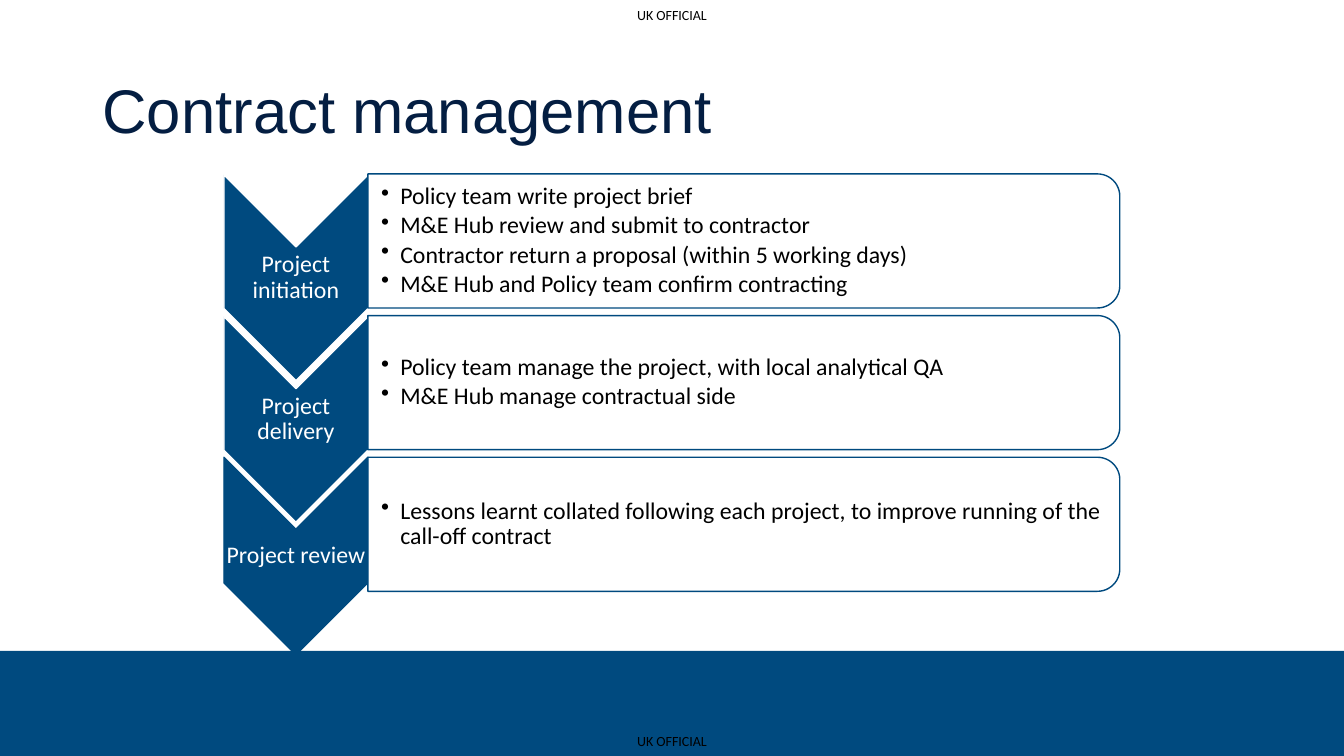
import lxml.etree
import pptx
import pptx.dml.color
import pptx.enum.shapes
import pptx.enum.text
import pptx.oxml.ns
import pptx.util

RGBColor = pptx.dml.color.RGBColor
BLUE = RGBColor(0x00, 0x4A, 0x7F)
NAVY = RGBColor(0x04, 0x1E, 0x42)
WHITE = RGBColor(0xFF, 0xFF, 0xFF)
BLACK = RGBColor(0x00, 0x00, 0x00)

SHAPE = pptx.enum.shapes.MSO_SHAPE
ALIGN = pptx.enum.text.PP_ALIGN
ANCHOR = pptx.enum.text.MSO_ANCHOR

COLUMNS, ROWS = 96, 54
SLIDE_WIDTH = pptx.util.Inches(13.33)
SLIDE_HEIGHT = pptx.util.Inches(7.5)

ARROW_LEFT, ARROW_WIDTH = 16, 10.28
PANEL_LEFT, PANEL_WIDTH, PANEL_HEIGHT = 26.28, 53.7, 9.58
PANEL_TEXT_WIDTH, PANEL_TEXT_HEIGHT = 53.2, 8.64
FIRST_CENTRE, STAGE_PITCH = 17.21, 10.12
THIN_INSET = 0.07

STAGES = [
    {
        "name": "Project initiation",
        "steps": [
            "Policy team write project brief",
            "M&E Hub review and submit to contractor",
            "Contractor return a proposal (within 5 working days)",
            "M&E Hub and Policy team confirm contracting",
        ],
        "arrow": {"length": 14.69, "drop": 2.63, "outline": WHITE},
    },
    {
        "name": "Project delivery",
        "steps": [
            "Policy team manage the project, with local analytical QA",
            "M&E Hub manage contractual side",
        ],
        "arrow": {"length": 14.69, "drop": 2.63, "outline": WHITE},
    },
    {
        "name": "Project review",
        "steps": [
            "Lessons learnt collated following each project, "
            "to improve running of the call-off contract",
        ],
        "arrow": {"length": 14.11, "drop": 2.27, "outline": BLUE},
    },
]


def across(columns):
    return round(SLIDE_WIDTH * columns / COLUMNS)


def down(rows):
    return round(SLIDE_HEIGHT * rows / ROWS)


def place(left, top, width, height):
    return across(left), down(top), across(width), down(height)


def add_bullet(para, indent):
    settings = para._p.get_or_add_pPr()
    settings.set("marL", str(across(indent)))
    settings.set("indent", str(-across(indent)))
    lxml.etree.SubElement(settings, pptx.oxml.ns.qn("a:buChar"), char="•")


def add_text(shapes, area, lines, *, size, color, font="Calibri", align=ALIGN.LEFT,
             insets=(0, 0, 0, 0), spacing=1.0, after=0, bullet_indent=None):
    box = shapes.add_textbox(*place(*area))
    frame = box.text_frame
    frame.word_wrap = True
    frame.vertical_anchor = ANCHOR.MIDDLE
    left, top, right, bottom = insets
    frame.margin_left, frame.margin_right = across(left), across(right)
    frame.margin_top, frame.margin_bottom = down(top), down(bottom)
    for number, line in enumerate(lines):
        para = frame.add_paragraph() if number else frame.paragraphs[0]
        para.alignment = align
        para.line_spacing = spacing
        para.space_after = pptx.util.Pt(after)
        if bullet_indent:
            add_bullet(para, bullet_indent)
        span = para.add_run()
        span.text = line
        span.font.name = font
        span.font.size = pptx.util.Pt(size)
        span.font.color.rgb = color


def add_block(shapes, kind, area, fill, outline=None, rotation=0):
    block = shapes.add_shape(kind, *place(*area))
    block.shadow.inherit = False
    block.rotation = rotation
    block.fill.solid()
    block.fill.fore_color.rgb = fill
    if outline is None:
        block.line.fill.background()
    else:
        block.line.color.rgb = outline
        block.line.width = pptx.util.Pt(1)
    return block


def add_turned_block(shapes, kind, left, centre, width, height, fill, outline):
    area = (left + (width - height) / 2, centre - width / 2, height, width)
    return add_block(shapes, kind, area, fill, outline, rotation=90)


def add_arrow(shapes, centre, length, outline):
    area = (ARROW_LEFT + (ARROW_WIDTH - length) / 2, centre - ARROW_WIDTH / 2,
            length, ARROW_WIDTH)
    return add_block(shapes, SHAPE.CHEVRON, area, BLUE, outline, rotation=90)


def set_opacity(block, percent):
    solid = block._element.spPr.find(pptx.oxml.ns.qn("a:solidFill"))
    lxml.etree.SubElement(solid[0], pptx.oxml.ns.qn("a:alpha"), val=str(percent * 1000))


def add_stage(shapes, centre, name, steps, arrow):
    middle = centre + arrow["drop"]
    add_arrow(shapes, middle, arrow["length"], arrow["outline"])
    add_text(shapes, (ARROW_LEFT, middle - 2.2, ARROW_WIDTH, 4.4), [name],
             size=17, color=WHITE, align=ALIGN.CENTER, spacing=0.9,
             insets=(THIN_INSET,) * 4)
    panel = add_turned_block(shapes, SHAPE.ROUND_2_SAME_RECTANGLE, PANEL_LEFT, centre,
                             PANEL_HEIGHT, PANEL_WIDTH, WHITE, BLUE)
    panel.left = across(PANEL_LEFT + (PANEL_WIDTH - PANEL_HEIGHT) / 2)
    panel.top = down(centre - PANEL_WIDTH / 2)
    panel.width, panel.height = across(PANEL_HEIGHT), down(PANEL_WIDTH)
    set_opacity(panel, 90)
    text_area = (PANEL_LEFT, centre - PANEL_TEXT_HEIGHT / 2,
                 PANEL_TEXT_WIDTH, PANEL_TEXT_HEIGHT)
    add_text(shapes, text_area, steps, size=17, color=BLACK, spacing=0.9, after=2.5,
             insets=(0.94, THIN_INSET, THIN_INSET, THIN_INSET), bullet_indent=1.37)


def main():
    deck = pptx.Presentation()
    deck.slide_width, deck.slide_height = SLIDE_WIDTH, SLIDE_HEIGHT
    page = deck.slides.add_slide(deck.slide_layouts[6])

    add_block(page.shapes, SHAPE.RECTANGLE, (0, 46.5, COLUMNS, 7.5), BLUE)
    for top in (0, 51.9):
        add_text(page.shapes, (44.4, top, 7.2, 2.1), ["UK OFFICIAL"],
                 size=10, color=BLACK, align=ALIGN.CENTER)
    add_text(page.shapes, (6.6, 2.9, 82.8, 10.44), ["Contract management"],
             size=44, color=NAVY, font="Arial", spacing=0.9,
             insets=(0.72, 0.36, 0.72, 0.36))

    diagram = page.shapes.add_group_shape()
    for number, stage in enumerate(STAGES):
        add_stage(diagram.shapes, FIRST_CENTRE + number * STAGE_PITCH, **stage)

    deck.save("out.pptx")


if __name__ == "__main__":
    main()
